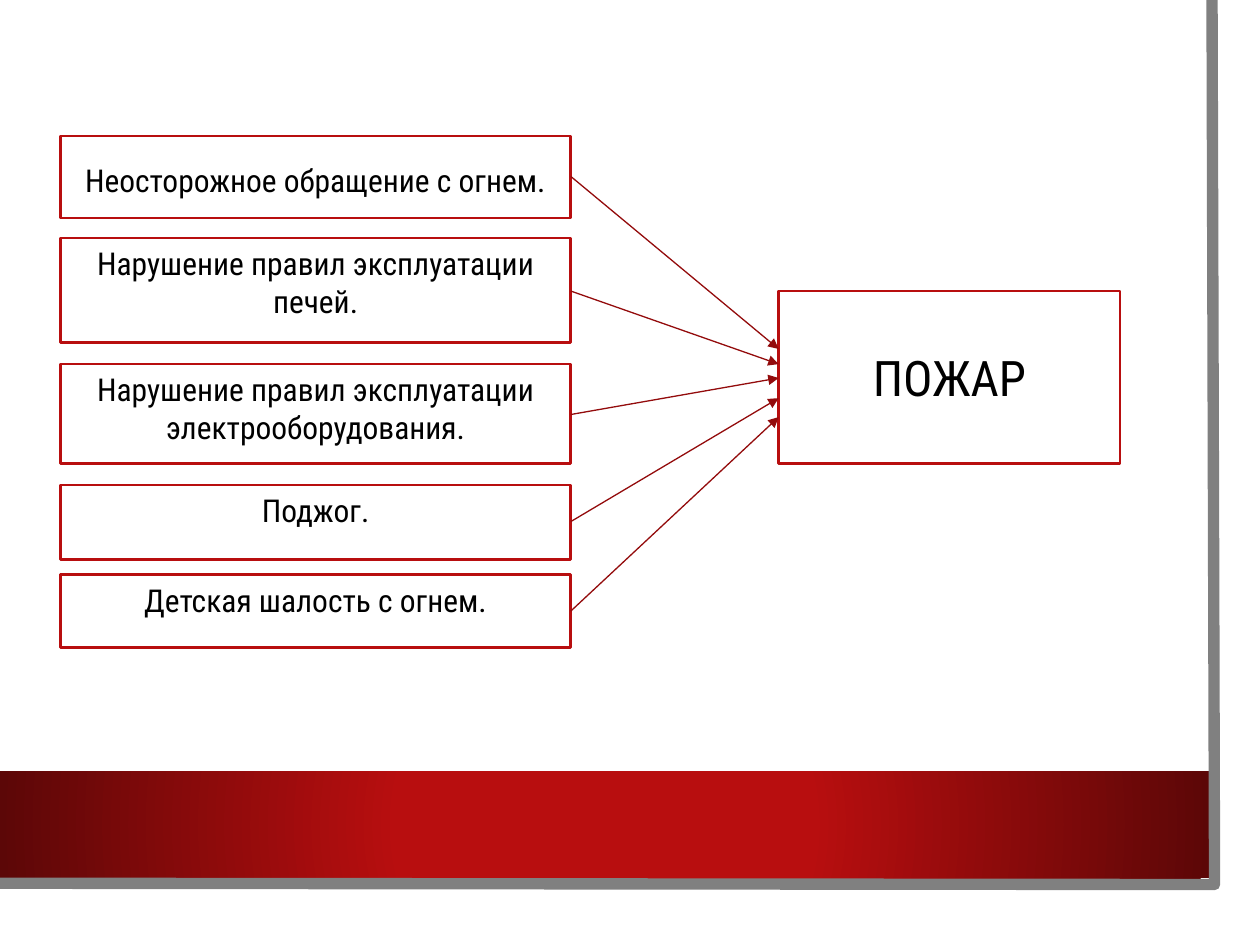
from lxml import etree
from pptx import Presentation
from pptx.dml.color import RGBColor
from pptx.enum.shapes import MSO_CONNECTOR, MSO_SHAPE
from pptx.enum.text import MSO_ANCHOR, PP_ALIGN
from pptx.oxml import parse_xml
from pptx.oxml.ns import nsdecls, qn
from pptx.util import Inches, Pt

RECT = MSO_SHAPE.RECTANGLE
STRAIGHT = MSO_CONNECTOR.STRAIGHT
TOP, MIDDLE = MSO_ANCHOR.TOP, MSO_ANCHOR.MIDDLE
CENTER = PP_ALIGN.CENTER
FONT = "Roboto Condensed"
COLORS = {
    "white": "FFFFFF",
    "black": "000000",
    "red": "B80E0F",
    "dark": "5C0707",
    "arrow": "930B0C",
    "gray": "808080",
}


def rgb(name):
    return RGBColor.from_string(COLORS[name])


def add_box(shapes, x, y, w, h, text="", size=18, anchor=TOP, spacing=1.0):
    sp = shapes.add_shape(RECT, Inches(x), Inches(y), Inches(w), Inches(h))
    sp.shadow.inherit = False
    sp.fill.solid()
    sp.fill.fore_color.rgb = rgb("white")
    if not text:
        sp.line.fill.background()
        return sp
    sp.line.color.rgb = rgb("red")
    sp.line.width = Pt(1.5)
    tf = sp.text_frame
    tf.word_wrap = True
    tf.vertical_anchor = anchor
    p = tf.paragraphs[0]
    p.alignment = CENTER
    p.line_spacing = spacing
    r = p.add_run()
    r.text = text
    r.font.name = FONT
    r.font.size = Pt(size)
    r.font.color.rgb = rgb("black")
    return sp


prs = Presentation()
prs.slide_width = Inches(10)
prs.slide_height = Inches(7.5)
s = prs.slides.add_slide(prs.slide_layouts[6])

add_box(s.shapes, 0, 0, 9.83, 7.27)

band = add_box(s.shapes, 0, 6.12, 9.6, 0.85)
solid = band._element.spPr.find(qn("a:solidFill"))
gradient = parse_xml(
    f'<a:gradFill {nsdecls("a")} rotWithShape="1"><a:gsLst>'
    f'<a:gs pos="34000"><a:srgbClr val="{COLORS["red"]}"/></a:gs>'
    f'<a:gs pos="100000"><a:srgbClr val="{COLORS["dark"]}"/></a:gs>'
    '</a:gsLst><a:path path="circle">'
    '<a:fillToRect l="50000" t="50000" r="50000" b="50000"/>'
    "</a:path></a:gradFill>"
)
band._element.spPr.replace(solid, gradient)

fb = s.shapes.build_freeform(Inches(9.62), 0)
fb.add_line_segments(
    [(Inches(9.64), Inches(7.02)), (Inches(-0.02), Inches(7.01))], close=False
)
edge = fb.convert_to_shape()
edge.shadow.inherit = False
edge.fill.background()
edge.line.color.rgb = rgb("gray")
edge.line.width = Pt(6.5)

LEFT, WIDTH, TARGET = 0.48, 4.05, 6.18
causes = [
    ("Неосторожное обращение с огнем.", 1.08, 0.65, 1.5, 1.4, 2.77),
    ("Нарушение правил эксплуатации печей.", 1.89, 0.83, 1.0, 2.31, 2.89),
    ("Нарушение правил эксплуатации электрооборудования.", 2.89, 0.79, 1.0, 3.29, 3),
    ("Поджог.", 3.85, 0.59, 1.0, 4.14, 3.16),
    ("Детская шалость с огнем.", 4.56, 0.58, 1.0, 4.85, 3.31),
]
for text, y, h, spacing, start, end in causes:
    add_box(s.shapes, LEFT, y, WIDTH, h, text, spacing=spacing)

add_box(s.shapes, TARGET, 2.31, 2.71, 1.37, "ПОЖАР", size=28, anchor=MIDDLE)

for *_, start, end in causes:
    arrow = s.shapes.add_connector(
        STRAIGHT, Inches(LEFT + WIDTH), Inches(start), Inches(TARGET), Inches(end)
    )
    arrow.line.color.rgb = rgb("arrow")
    arrow.line.width = Pt(0.75)
    etree.SubElement(arrow.line._get_or_add_ln(), qn("a:tailEnd"), type="triangle")
    etree.SubElement(arrow._element.spPr, qn("a:effectLst"))

prs.save("out.pptx")
